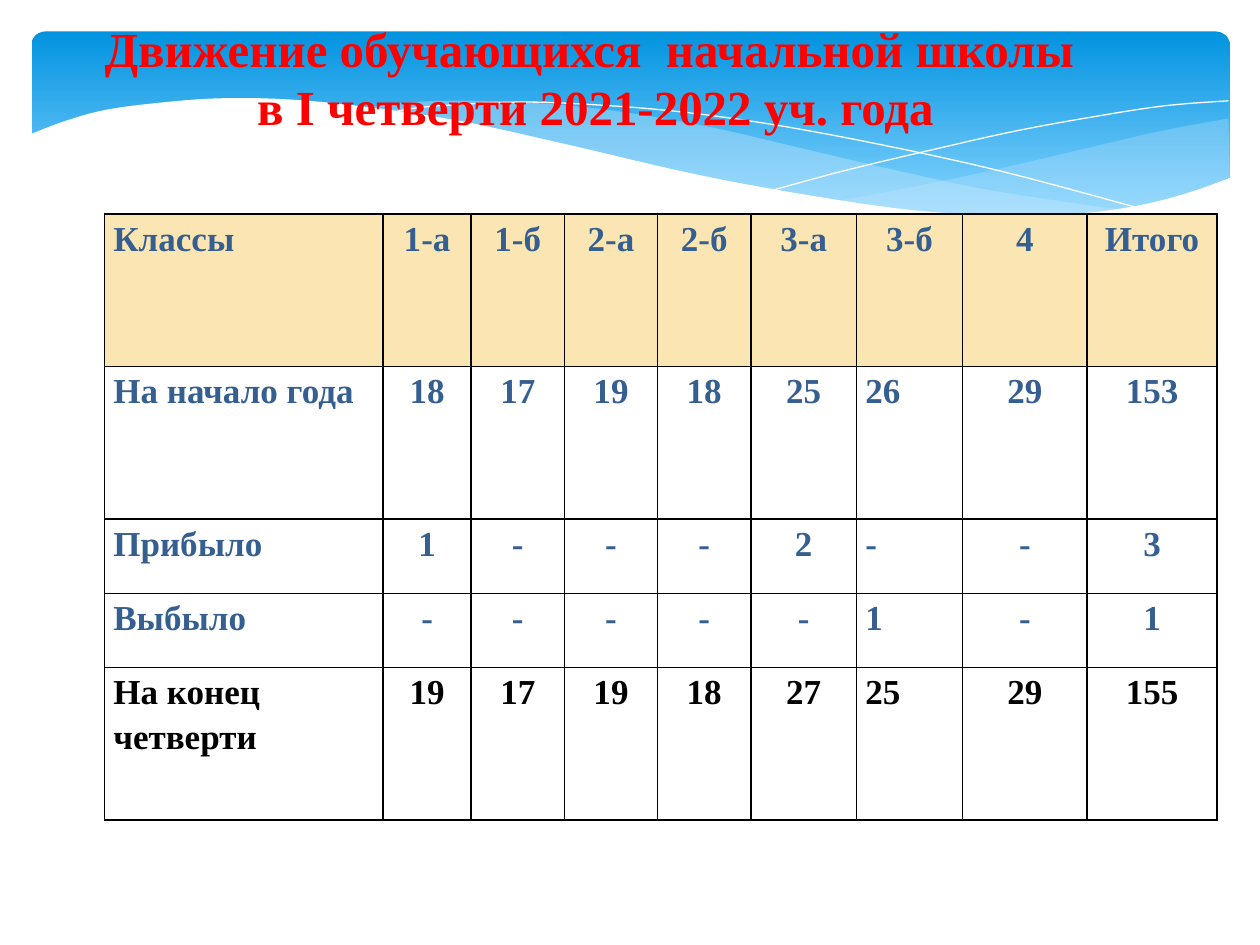
from lxml.etree import SubElement
from pptx import Presentation
from pptx.dml.color import RGBColor
from pptx.enum.shapes import MSO_SHAPE
from pptx.enum.text import MSO_ANCHOR, PP_ALIGN
from pptx.oxml.ns import qn
from pptx.util import Inches, Pt

COLORS = {
    "sky_top": "0293E0", "sky_bottom": "83D3FE", "mist": "C6E7FC", "white": "FFFFFF",
    "title": "FF0000", "header": "FBE6B3", "text": "365F91", "black": "000000",
}
FONT = "Times New Roman"
GRID_COLUMNS, GRID_ROWS = 1000, 750
UNIT = Inches(10) // GRID_COLUMNS

BANNER_BOX = (25, 25, 951, 156)
TITLE_BOX = (69, 9, 807, 104)
TABLE_BOX = (83, 170, 882, 480)

RIGHT_WAVE = [
    [(950, 69), (896, 79), (836, 93), (754, 112), (681, 127), (636, 135)],
    [(636, 135), (707, 143), (767, 147), (819, 146), (856, 142), (888, 137),
     (917, 129), (951, 116)],
]
MIDDLE_WAVE = [
    [(261, 61), (303, 56), (355, 55), (417, 58), (477, 65), (544, 77), (604, 91),
     (681, 109), (750, 124), (812, 134), (868, 142)],
    [(868, 142), (832, 146), (782, 148), (723, 145), (655, 138), (576, 125),
     (505, 110), (424, 91), (358, 76), (298, 65), (261, 61)],
]
FALLING_LINE = [
    [(284, 65), (303, 61), (338, 58), (391, 56), (444, 58), (508, 63), (583, 73),
     (670, 89), (770, 111), (882, 141)],
]
RISING_LINE = [
    [(588, 126), (647, 110), (723, 92), (781, 79), (841, 68), (899, 59), (950, 55)],
]
FRONT_WAVE = [
    [(952, 116), (915, 129), (874, 139), (825, 145), (768, 146), (701, 142),
     (623, 131), (530, 114), (422, 89), (340, 71), (267, 60), (205, 54), (152, 53),
     (107, 56), (60, 62), (27, 71), (-2, 82)],
    [(-2, 199), (952, 199)],
]

TITLE_LINES = ["Движение обучающихся  начальной школы ", "в I четверти 2021-2022 уч. года"]
COLUMN_WIDTHS = [221, 70, 74, 74, 74, 84, 84, 99, 103]
ROW_HEIGHTS = [121, 121, 59, 59, 121]
TABLE_ROWS = [
    ["Классы", "1-а", "1-б", "2-а", "2-б", "3-а", "3-б", "4", "Итого"],
    ["На начало года", "18", "17", "19", "18", "25", "26", "29", "153"],
    ["Прибыло", "1", "-", "-", "-", "2", "-", "-", "3"],
    ["Выбыло", "-", "-", "-", "-", "-", "1", "-", "1"],
    ["На конец четверти", "19", "17", "19", "18", "27", "25", "29", "155"],
]


def rgb(name):
    return RGBColor.from_string(COLORS[name])


def emu(box):
    return [value * UNIT for value in box]


def smooth(knots, steps=5):
    padded = [knots[0], *knots, knots[-1]]
    points = [knots[0]]
    for a, b, c, d in zip(padded, padded[1:], padded[2:], padded[3:]):
        for step in range(1, steps + 1):
            t = step / steps
            points.append(tuple(
                (2 * q + (r - p) * t + (2 * p - 5 * q + 4 * r - s) * t ** 2
                 + (3 * q - p - 3 * r + s) * t ** 3) / 2
                for p, q, r, s in zip(a, b, c, d)))
    return points


def add_curve(page, box, curves, fill=None, opacity=100):
    left, top = box[:2]
    points = [(round((left + x) * UNIT), round((top + y) * UNIT))
              for knots in curves for x, y in smooth(knots)]
    builder = page.shapes.build_freeform(*points[0], scale=1.0)
    builder.add_line_segments(points[1:], close=fill is not None)
    curve = builder.convert_to_shape()
    curve.shadow.inherit = False
    if fill is None:
        curve.fill.background()
        curve.line.color.rgb = rgb("white")
        curve.line.width = Pt(0)
        return
    curve.fill.solid()
    curve.fill.fore_color.rgb = rgb(fill)
    curve.line.fill.background()
    if opacity < 100:
        color = curve.fill._xPr.find(qn("a:solidFill"))[0]
        SubElement(color, qn("a:alpha"), val=str(opacity * 1000))


def add_banner(page, box):
    sky = page.shapes.add_shape(MSO_SHAPE.ROUNDED_RECTANGLE, *emu(box))
    sky.adjustments[0] = 0.07
    sky.shadow.inherit = False
    sky.line.fill.background()
    sky.fill.gradient()
    sky.fill.gradient_angle = 270
    stops = [("sky_top", 0), ("sky_bottom", 0.9)]
    for stop, (name, position) in zip(sky.fill.gradient_stops, stops):
        stop.color.rgb = rgb(name)
        stop.position = position
    add_curve(page, box, RIGHT_WAVE, "mist", 29)
    add_curve(page, box, MIDDLE_WAVE, "mist", 40)
    add_curve(page, box, FALLING_LINE)
    add_curve(page, box, RISING_LINE)
    add_curve(page, box, FRONT_WAVE, "white")


def style_paragraph(para, size, color, alignment):
    para.alignment = alignment
    para.font.name = FONT
    para.font.size = Pt(size)
    para.font.bold = True
    para.font.color.rgb = rgb(color)


def add_title(page, box):
    frame = page.shapes.add_textbox(*emu(box)).text_frame
    frame.word_wrap = False
    frame.vertical_anchor = MSO_ANCHOR.MIDDLE
    frame.text = "\n".join(TITLE_LINES)
    for para in frame.paragraphs:
        style_paragraph(para, 28, "title", PP_ALIGN.CENTER)


def add_borders(cell):
    properties = cell._tc.get_or_add_tcPr()
    for position, side in enumerate(("lnL", "lnR", "lnT", "lnB")):
        border = properties.makeelement(qn(f"a:{side}"), {"w": str(Pt(1))})
        fill = SubElement(border, qn("a:solidFill"))
        SubElement(fill, qn("a:srgbClr"), val=COLORS["black"])
        properties.insert(position, border)


def fill_cell(cell, text, row, column):
    cell.margin_left = cell.margin_right = 7 * UNIT
    cell.margin_top = cell.margin_bottom = 0
    cell.text = text
    para = cell.text_frame.paragraphs[0]
    para.line_spacing = 1.15
    is_left = column == 0 or (column == 6 and row > 0)
    color = "black" if row == len(TABLE_ROWS) - 1 else "text"
    style_paragraph(para, 20, color, PP_ALIGN.LEFT if is_left else PP_ALIGN.CENTER)
    if row == 0:
        cell.fill.solid()
        cell.fill.fore_color.rgb = rgb("header")
    else:
        cell.fill.background()
    add_borders(cell)


def add_movement_table(page, box):
    table = page.shapes.add_table(len(ROW_HEIGHTS), len(COLUMN_WIDTHS), *emu(box)).table
    table.first_row = table.horz_banding = False
    for column, width in zip(table.columns, COLUMN_WIDTHS):
        column.width = width * UNIT
    for row, height in zip(table.rows, ROW_HEIGHTS):
        row.height = height * UNIT
    for row, texts in enumerate(TABLE_ROWS):
        for column, text in enumerate(texts):
            fill_cell(table.cell(row, column), text, row, column)


def main():
    deck = Presentation()
    deck.slide_width = GRID_COLUMNS * UNIT
    deck.slide_height = GRID_ROWS * UNIT
    page = deck.slides.add_slide(deck.slide_layouts[6])
    add_banner(page, BANNER_BOX)
    add_title(page, TITLE_BOX)
    add_movement_table(page, TABLE_BOX)
    deck.save("out.pptx")


if __name__ == "__main__":
    main()
